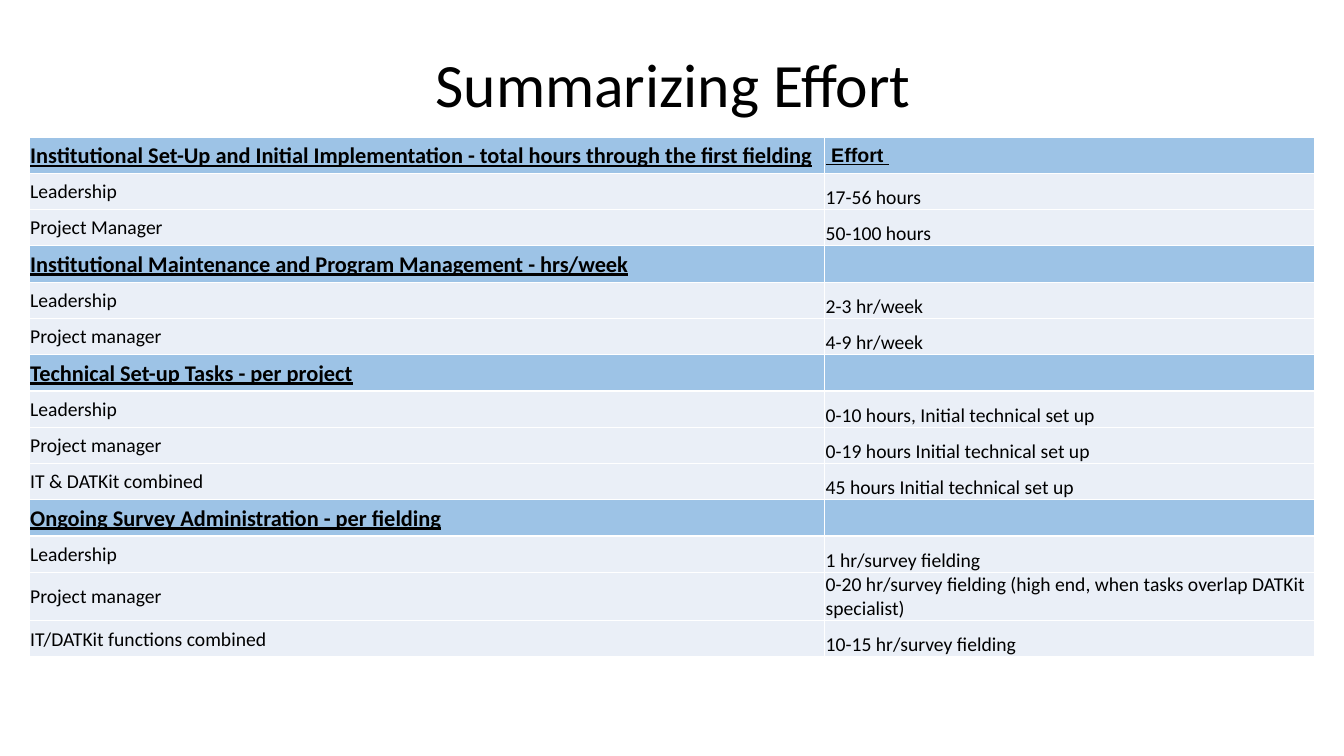
from lxml import etree
from pptx import Presentation
from pptx.dml.color import RGBColor
from pptx.enum.text import MSO_ANCHOR, PP_ALIGN
from pptx.oxml.ns import qn
from pptx.util import Inches, Pt

MIDDLE, BOTTOM = MSO_ANCHOR.MIDDLE, MSO_ANCHOR.BOTTOM
LEFT = PP_ALIGN.LEFT


class Theme:
    ink, head, body, rule = "000000", "9DC3E6", "EAEFF7", "FFFFFF"
    face = "Calibri"
    title = dict(name=face, size=Pt(44))
    group = dict(name=face, size=Pt(16), bold=True, underline=True)
    effort = dict(name="Arial", size=Pt(14), bold=True, underline=True)
    plain = dict(name=face, size=Pt(14), bold=False, underline=False)


# Each group: heading, heading of the effort column, rows
GROUPS = [
    ("Institutional Set-Up and Initial Implementation - total hours through the first fielding",
     " Effort ",
     [("Leadership", "17-56 hours"),
      ("Project Manager", "50-100 hours")]),
    ("Institutional Maintenance and Program Management - hrs/week", "",
     [("Leadership", "2-3 hr/week"),
      ("Project manager", "4-9 hr/week")]),
    ("Technical Set-up Tasks - per project", "",
     [("Leadership", "0-10 hours, Initial technical set up"),
      ("Project manager", "0-19 hours Initial technical set up"),
      ("IT & DATKit combined", "45 hours Initial technical set up")]),
    ("Ongoing Survey Administration - per fielding", "",
     [("Leadership", "1 hr/survey fielding"),
      ("Project manager",
       "0-20 hr/survey fielding (high end, when tasks overlap DATKit specialist)"),
      ("IT/DATKit functions combined", "10-15 hr/survey fielding")]),
]
WIDTHS = [7.89, 4.86]
ROW, TALL = 0.36, 0.48


class Deck:
    def __init__(self, theme):
        self.theme = theme
        self.show = Presentation()
        self.show.slide_width, self.show.slide_height = Inches(13.33), Inches(7.5)
        self.slide = self.show.slides.add_slide(self.show.slide_layouts[6])

    def label(self, para, text, style):
        run = para.add_run()
        run.text = text
        for key, value in style.items():
            setattr(run.font, key, value)
        run.font.color.rgb = RGBColor.from_string(self.theme.ink)

    def title(self, text, box):
        frame = self.slide.shapes.add_textbox(*map(Inches, box)).text_frame
        frame.word_wrap, frame.vertical_anchor = True, MIDDLE
        para = frame.paragraphs[0]
        para.alignment, para.line_spacing = LEFT, 0.9
        self.label(para, text, self.theme.title)

    def border(self, cell):
        props = cell._tc.get_or_add_tcPr()
        for side in ("a:lnL", "a:lnR", "a:lnT", "a:lnB"):
            line = etree.SubElement(props, qn(side), w=str(Pt(1)))
            fill = etree.SubElement(line, qn("a:solidFill"))
            etree.SubElement(fill, qn("a:srgbClr"), val=self.theme.rule)

    def cell(self, cell, text, style, fill, anchor):
        pad = Inches(0.01)
        form = dict(margin_left=pad, margin_right=pad, margin_top=pad,
                    margin_bottom=0, vertical_anchor=anchor)
        for key, value in form.items():
            setattr(cell, key, value)
        self.border(cell)
        cell.fill.solid()
        cell.fill.fore_color.rgb = RGBColor.from_string(fill)
        if text:
            self.label(cell.text_frame.paragraphs[0], text, style)

    def table(self, left, top, widths, groups):
        look = self.theme
        # Flatten the groups into rows of cell formats
        rows = []
        for name, effort, tasks in groups:
            rows.append([(name, look.group, look.head, MIDDLE),
                         (effort, look.effort, look.head, MIDDLE)])
            rows += [[(task, look.plain, look.body, MIDDLE),
                      (hours, look.plain, look.body, BOTTOM)] for task, hours in tasks]
        highs = [TALL if len(row[1][0]) > 50 else ROW for row in rows]
        size = map(Inches, (left, top, sum(widths), sum(highs)))
        grid = self.slide.shapes.add_table(len(rows), len(widths), *size).table
        grid.horz_banding = grid.first_row = False
        for col, wide in zip(grid.columns, widths):
            col.width = Inches(wide)
        for line, high, row in zip(grid.rows, highs, rows):
            line.height = Inches(high)
            for cell, parts in zip(line.cells, row):
                self.cell(cell, *parts)


def main():
    deck = Deck(Theme)
    # Heading
    deck.title("Summarizing Effort", (4.22, 0.14, 8.95, 1.45))
    # Effort by phase and role
    deck.table(0.29, 1.36, WIDTHS, GROUPS)
    deck.show.save("out.pptx")


if __name__ == "__main__":
    main()
